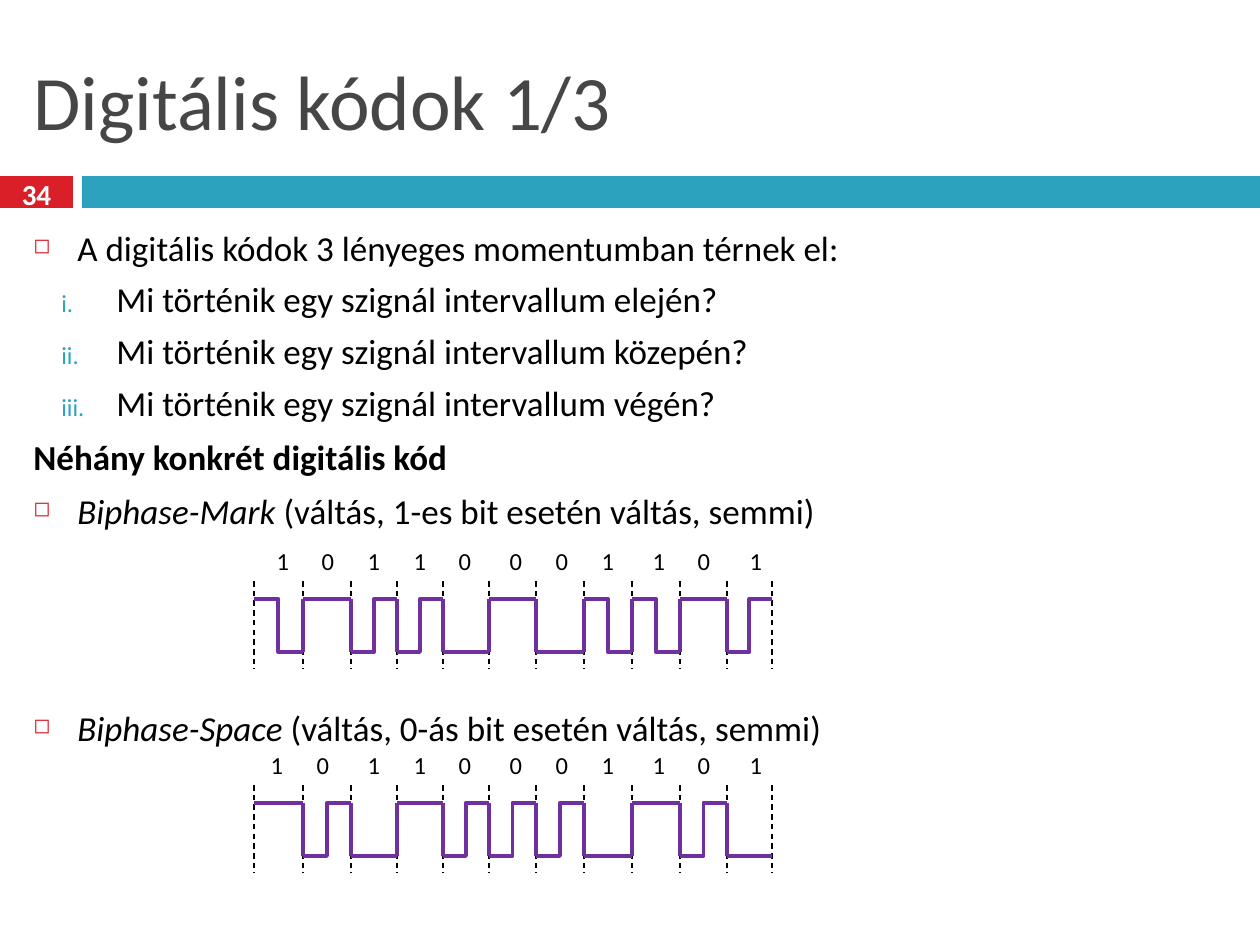
from itertools import pairwise

from lxml import etree
from pptx import Presentation
from pptx import util as u
from pptx.dml.color import RGBColor
from pptx.enum import dml, shapes, text
from pptx.oxml.ns import qn

RED = RGBColor(0xDA, 0x1F, 0x28)
TEAL = RGBColor(0x2D, 0xA2, 0xBF)
GREY = RGBColor(0x46, 0x46, 0x46)
BLACK = RGBColor(0x00, 0x00, 0x00)
WHITE = RGBColor(0xFF, 0xFF, 0xFF)
PURPLE = RGBColor(0x70, 0x30, 0xA0)

BITS = "10110001101"
EDGES = [254, 303, 351, 397, 443, 489, 536, 584, 632, 680, 727, 772]
MARK_CENTRES = [283, 328, 374, 420, 465, 516, 562, 608, 659, 704, 756]
SPACE_CENTRES = [277, 323] + MARK_CENTRES[2:]
INSET = 12.6


def px(length):
    return u.Emu(round(length * 914400 / 126))


class SlideBuilder:
    font = "Calibri"

    def __init__(self, slide):
        self.slide = slide

    def bar(self, x, y, width, height, colour):
        bar = self.slide.shapes.add_shape(
            shapes.MSO_SHAPE.RECTANGLE, px(x), px(y), px(width), px(height))
        bar.shadow.inherit = False
        bar.fill.solid()
        bar.fill.fore_color.rgb = colour
        bar.line.fill.background()

    def frame(self, x, y, width, height, anchor=text.MSO_ANCHOR.TOP):
        frame = self.slide.shapes.add_textbox(
            px(x), px(y), px(width), px(height)).text_frame
        frame.word_wrap = True
        frame.vertical_anchor = anchor
        return frame

    def run(self, paragraph, words, size, colour=BLACK, bold=False, italic=False):
        run = paragraph.add_run()
        run.text = words
        font = run.font
        font.name, font.size, font.bold, font.italic = self.font, u.Pt(size), bold, italic
        font.color.rgb = colour

    def bullet(self, paragraph, margin, indent, colour, percent, kind, **mark):
        """Add a hanging bullet; kind is the tag, buChar or buAutoNum."""
        props = paragraph._p.get_or_add_pPr()
        props.set("marL", str(px(margin)))
        props.set("indent", str(px(-indent)))
        tint = etree.SubElement(props, qn("a:buClr"))
        etree.SubElement(tint, qn("a:srgbClr"), val=str(colour))
        etree.SubElement(props, qn("a:buSzPct"), val=str(percent * 1000))
        etree.SubElement(props, qn(f"a:{kind}"), **mark)

    def line(self, start, end, colour, width, dash=None, bent=False):
        kind = shapes.MSO_CONNECTOR.ELBOW if bent else shapes.MSO_CONNECTOR.STRAIGHT
        line = self.slide.shapes.add_connector(kind, *map(px, (*start, *end)))
        line.line.color.rgb = colour
        line.line.width = u.Pt(width)
        if dash:
            line.line.dash_style = dash
        etree.SubElement(line._element.spPr, qn("a:effectLst"))

    def bit_row(self, top, centres):
        left = 253
        paragraph = self.frame(left, top, 564, 42).paragraphs[0]
        tabs = etree.SubElement(paragraph._p.get_or_add_pPr(), qn("a:tabLst"))
        for centre in centres:
            etree.SubElement(tabs, qn("a:tab"), algn="ctr",
                             pos=str(px(centre - left - INSET)))
        self.run(paragraph, "".join(f"\t{bit}" for bit in BITS), 14)

    def biphase(self, top, centres, toggling_bit):
        """Draw a signal that flips at every bit start, and mid-bit on toggling_bit."""
        self.bit_row(top, centres)
        for x in EDGES:
            self.line((x, top + 41), (x, top + 129), BLACK, 0.79, dml.MSO_LINE.DASH)
        high, low = top + 59, top + 112
        level, other = high, low
        for bit, (left, right) in zip(BITS, pairwise(EDGES)):
            if left > EDGES[0]:
                self.line((left, high), (left, low), PURPLE, 2.25)
            flips = bit == toggling_bit
            end = other if flips else level
            self.line((left, level), (right, end), PURPLE, 2.25, bent=flips)
            if not flips:
                level, other = other, level


def write_body(builder):
    body = builder.frame(21, 220, 1218, 703)

    def paragraph(space_before):
        first = not body.paragraphs[0].runs
        added = body.paragraphs[0] if first else body.add_paragraph()
        added.space_before = u.Pt(space_before)
        return added

    def square(space_before=7):
        added = paragraph(space_before)
        builder.bullet(added, 44, 44, RED, 60, "buChar", char="◻")
        return added

    builder.run(square(), "A digitális kódok 3 lényeges momentumban térnek el:", 20)
    for moment in ("elején", "közepén", "végén"):
        question = paragraph(5.5)
        builder.bullet(question, 83, 55, TEAL, 70, "buAutoNum", type="romanLcPeriod")
        builder.run(question, f"Mi történik egy szignál intervallum {moment}?", 20)
    builder.run(paragraph(7), "Néhány konkrét digitális kód", 20, bold=True)
    for code, rule, space_before in (
        ("Biphase-Mark", " (váltás, 1-es bit esetén váltás, semmi)", 7),
        ("Biphase-Space", " (váltás, 0-ás bit esetén váltás, semmi)", 100),
    ):
        entry = square(space_before)
        builder.run(entry, code, 20, italic=True)
        builder.run(entry, rule, 20)


def main():
    deck = Presentation()
    deck.slide_width, deck.slide_height = px(1260), px(945)
    builder = SlideBuilder(deck.slides.add_slide(deck.slide_layouts[6]))

    builder.bar(0, 176, 73, 32, RED)
    builder.bar(82, 176, 1178, 32, TEAL)
    title = builder.frame(21, 32, 1218, 136, text.MSO_ANCHOR.MIDDLE)
    builder.run(title.paragraphs[0], "Digitális kódok 1/3", 44, GREY)
    write_body(builder)
    builder.biphase(540, MARK_CENTRES, "1")
    builder.biphase(744, SPACE_CENTRES, "0")

    number = builder.frame(0, 173, 73, 42, text.MSO_ANCHOR.MIDDLE).paragraphs[0]
    number.alignment = text.PP_ALIGN.CENTER
    builder.run(number, "34", 16.6, WHITE, bold=True)
    deck.save("out.pptx")


if __name__ == "__main__":
    main()
